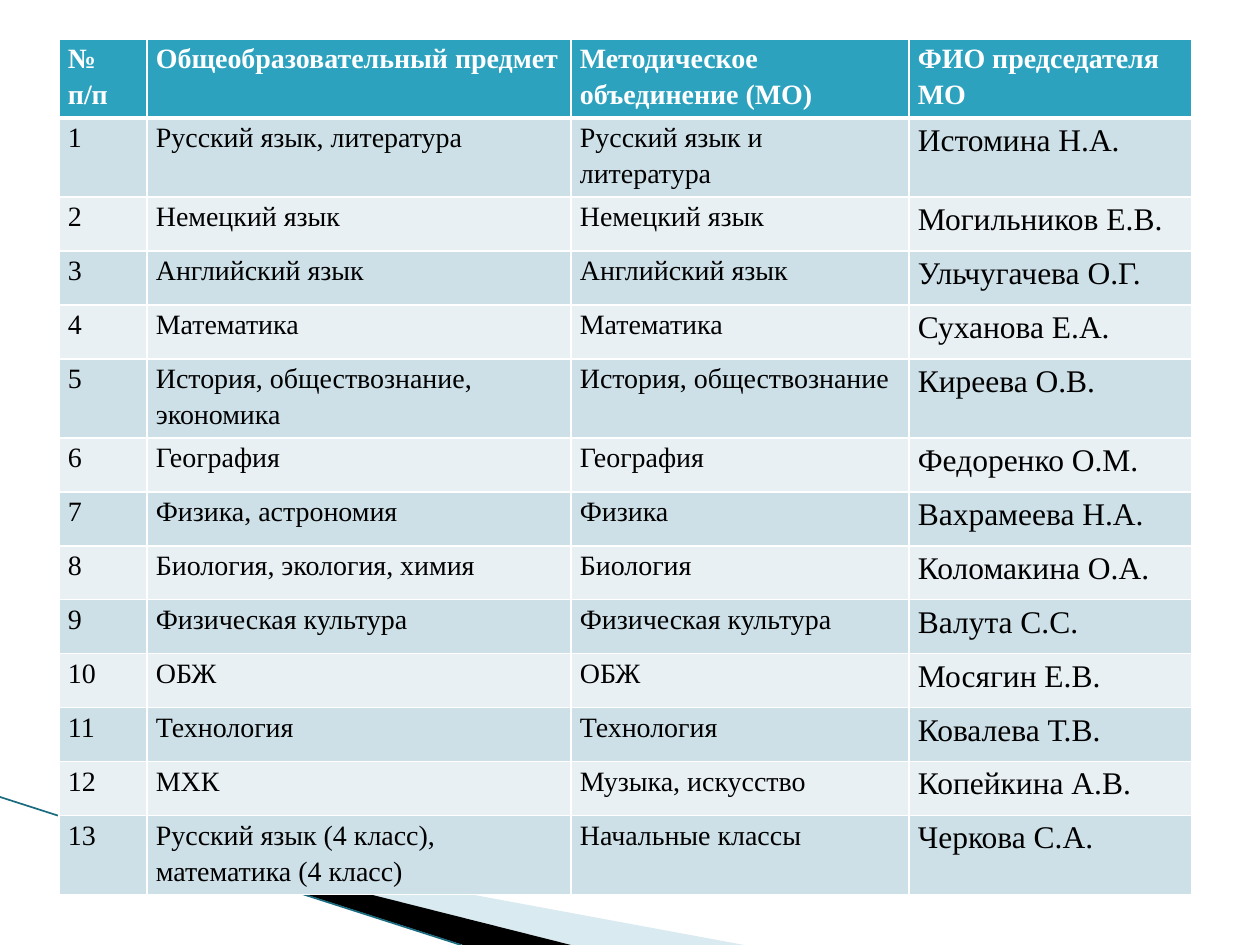
from pptx import Presentation
from pptx.dml.color import RGBColor
from pptx.enum.shapes import MSO_CONNECTOR
from pptx.oxml.ns import qn
from pptx.util import Pt
from lxml import etree

STRAIGHT = MSO_CONNECTOR.STRAIGHT
PX = 914400 / 126
FONT = "Times New Roman"
COLORS = {
    "header": "2DA2BF",
    "odd": "CDE0E8",
    "even": "E8F0F4",
    "white": "FFFFFF",
    "black": "000000",
    "swoosh": "A0CBDC",
    "line": "1B6B80",
}
COLUMNS = [88, 424, 338, 283]
LOW_ROW, TALL_ROW = 54, 79
TALL_ROWS = {0, 1, 5, 13}
HEADER = ["№ п/п", "Общеобразовательный предмет",
          "Методическое объединение (МО)", "ФИО председателя МО"]
SUBJECTS = [
    ("Русский язык, литература", "Русский язык и литература", "Истомина Н.А."),
    ("Немецкий язык", "Немецкий язык", "Могильников Е.В."),
    ("Английский язык", "Английский язык", "Ульчугачева О.Г."),
    ("Математика", "Математика", "Суханова Е.А."),
    ("История, обществознание, экономика", "История, обществознание", "Киреева О.В."),
    ("География", "География", "Федоренко О.М."),
    ("Физика, астрономия", "Физика", "Вахрамеева Н.А."),
    ("Биология, экология, химия", "Биология", "Коломакина О.А."),
    ("Физическая культура", "Физическая культура", "Валута С.С."),
    ("ОБЖ", "ОБЖ", "Мосягин Е.В."),
    ("Технология", "Технология", "Ковалева Т.В."),
    ("МХК", "Музыка, искусство", "Копейкина А.В."),
    ("Русский язык (4 класс),\nматематика (4 класс)", "Начальные классы", "Черкова С.А."),
]


def px(n):
    """Turn pixels into EMU."""
    return round(n * PX)


def rgb(name):
    """Look up a named colour."""
    return RGBColor.from_string(COLORS[name])


def add_polygon(slide, points, color, alpha=None):
    """Add a filled closed outline, optionally with an opacity in percent."""
    builder = slide.shapes.build_freeform(*points[0], scale=PX)
    builder.add_line_segments(points[1:], close=True)
    s = builder.convert_to_shape()
    s.shadow.inherit = False
    s.fill.solid()
    s.fill.fore_color.rgb = rgb(color)
    s.line.fill.background()
    if alpha is not None:
        clr = s._element.spPr.find(qn("a:solidFill"))[0]
        etree.SubElement(clr, qn("a:alpha")).set("val", str(alpha * 1000))


def add_line(slide, start, end, color, width):
    """Add a straight line without a shadow."""
    ends = [px(n) for n in (*start, *end)]
    s = slide.shapes.add_connector(STRAIGHT, *ends)
    s.line.color.rgb = rgb(color)
    s.line.width = Pt(width)
    etree.SubElement(s._element.spPr, qn("a:effectLst"))


def set_borders(cell, widths, color):
    """Draw the cell edges with the given widths in points."""
    tc_pr = cell._tc.get_or_add_tcPr()
    for side, width in widths.items():
        ln = etree.SubElement(tc_pr, qn(f"a:ln{side}"), w=str(Pt(width)))
        fill = etree.SubElement(ln, qn("a:solidFill"))
        etree.SubElement(fill, qn("a:srgbClr"), val=COLORS[color])


def fill_cell(cell, text, row, size):
    """Write one table cell with its fill, borders and font."""
    is_header = row == 0
    set_borders(cell, {"L": 1, "R": 1, "T": 3 if row == 1 else 1,
                       "B": 3 if is_header else 1}, "white")
    cell.fill.solid()
    cell.fill.fore_color.rgb = rgb("header" if is_header else "odd" if row % 2 else "even")
    cell.margin_left = cell.margin_right = px(9)
    cell.margin_top = cell.margin_bottom = 0
    cell.text_frame.text = text
    for p in cell.text_frame.paragraphs:
        p.line_spacing = 1.15
        for r in p.runs:
            r.font.name = FONT
            r.font.size = Pt(size)
            r.font.bold = is_header
            r.font.color.rgb = rgb("white" if is_header else "black")


def add_subject_table(slide, left, top):
    """Add the table of subjects and their chairpersons."""
    rows = [HEADER] + [(str(i), *subject) for i, subject in enumerate(SUBJECTS, 1)]
    heights = [TALL_ROW if i in TALL_ROWS else LOW_ROW for i in range(len(rows))]
    table = slide.shapes.add_table(len(rows), len(COLUMNS), px(left), px(top),
                                   px(sum(COLUMNS)), px(sum(heights))).table
    for column, width in zip(table.columns, COLUMNS):
        column.width = px(width)
    for i, (texts, height) in enumerate(zip(rows, heights)):
        table.rows[i].height = px(height)
        for j, text in enumerate(texts):
            is_name = i > 0 and j == len(COLUMNS) - 1
            fill_cell(table.cell(i, j), text, i, 18 if is_name else 16)


def main():
    """Build the slide and save it."""
    prs = Presentation()
    prs.slide_width, prs.slide_height = px(1260), px(945)
    slide = prs.slides.add_slide(prs.slide_layouts[6])
    add_polygon(slide, [(69, 820), (744, 945), (572, 945)], "swoosh", 40)
    add_polygon(slide, [(67, 818), (571, 945), (463, 945)], "black")
    add_line(slide, (0, 797), (461, 945), "line", 0.95)
    add_subject_table(slide, 59, 39)
    prs.save("out.pptx")


if __name__ == "__main__":
    main()
